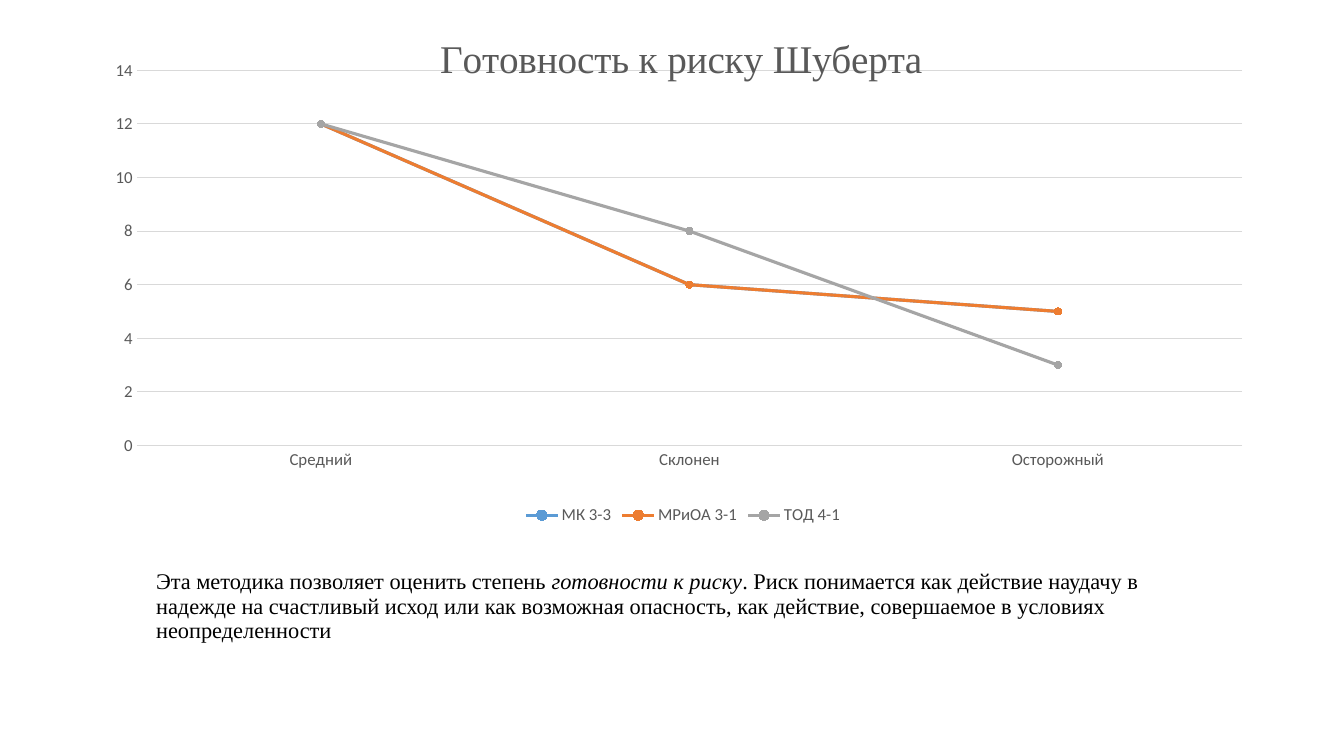
from dataclasses import dataclass

from lxml import etree
from pptx import Presentation
from pptx.chart.data import CategoryChartData
from pptx.dml.color import RGBColor
from pptx.enum.chart import XL_CHART_TYPE as ChartType
from pptx.enum.chart import XL_LEGEND_POSITION as LegendPos
from pptx.enum.chart import XL_MARKER_STYLE as Marker
from pptx.enum.chart import XL_TICK_MARK as Tick
from pptx.enum.text import MSO_ANCHOR as Anchor
from pptx.oxml.ns import qn
from pptx.util import Inches, Pt


@dataclass(frozen=True)
class Theme:
    serif: str = "Times New Roman"
    sans: str = "Calibri"
    ink: str = "000000"
    muted: str = "595959"
    grid: str = "D9D9D9"
    series: tuple = ("5B9BD5", "ED7D31", "A5A5A5")
    title_size: float = 28
    body_size: float = 16
    label_size: float = 12
    grid_width: float = 0.75
    line_width: float = 2.25
    marker_size: int = 5


def set_font(font, name, size, color):
    font.name = name
    font.size = Pt(size)
    font.color.rgb = RGBColor.from_string(color)


def add_run(p, text, *, name, size, color, bold=False, italic=False):
    r = p.add_run()
    r.text = text
    set_font(r.font, name, size, color)
    r.font.bold = bold
    r.font.italic = italic
    return r


def set_line(line, color, width):
    line.color.rgb = RGBColor.from_string(color)
    line.width = Pt(width)


def set_layout(parent, after, inner=False, **fractions):
    """Place a chart part by fractions of the chart's size."""
    for old in parent.findall(qn("c:layout")):
        parent.remove(old)
    layout = etree.Element(qn("c:layout"))
    manual = etree.SubElement(layout, qn("c:manualLayout"))
    values = {"layoutTarget": "inner"} if inner else {}
    values.update(xMode="edge", yMode="edge", **fractions)
    for tag, value in values.items():
        etree.SubElement(manual, qn(f"c:{tag}")).set("val", str(value))
    if after is None:
        parent.insert(0, layout)
    else:
        after.addnext(layout)


class SlideBuilder:
    def __init__(self, slide, theme):
        self.s = slide
        self.theme = theme

    def text(self, box, parts):
        t = self.theme
        sp = self.s.shapes.add_textbox(*map(Inches, box))
        tf = sp.text_frame
        tf.word_wrap = True
        tf.vertical_anchor = Anchor.MIDDLE
        p = tf.paragraphs[0]
        p.line_spacing = 0.9
        for text, italic in parts:
            add_run(p, text, name=t.serif, size=t.body_size, color=t.ink, italic=italic)

    def line_chart(self, box, title, categories, series):
        data = CategoryChartData()
        data.categories = categories
        for name, values in series.items():
            data.add_series(name, values)
        frame = self.s.shapes.add_chart(ChartType.LINE_MARKERS, *map(Inches, box), data)
        chart = frame.chart
        set_font(chart.font, self.theme.sans, self.theme.label_size, self.theme.muted)
        self.chart_title(chart, title)
        self.axes(chart)
        self.series_style(chart.plots[0])
        # Legend and plot area
        chart.has_legend = True
        chart.legend.position = LegendPos.BOTTOM
        chart.legend.include_in_layout = False
        set_font(chart.legend.font, self.theme.sans, self.theme.label_size, self.theme.muted)
        plot_area = chart.element.find(".//" + qn("c:plotArea"))
        set_layout(plot_area, None, inner=True, x=0.03, y=0.095, w=0.951, h=0.74)

    def chart_title(self, chart, title):
        t = self.theme
        chart.has_title = True
        p = chart.chart_title.text_frame.paragraphs[0]
        add_run(p, title, name=t.serif, size=t.title_size, color=t.muted)
        node = chart.element.find(".//" + qn("c:title"))
        set_layout(node, node.find(qn("c:tx")), x=0.285, y=0.01)

    def axes(self, chart):
        t = self.theme
        cat, val = chart.category_axis, chart.value_axis
        for axis in (cat, val):
            axis.major_tick_mark = axis.minor_tick_mark = Tick.NONE
            set_font(axis.tick_labels.font, t.sans, t.label_size, t.muted)
        set_line(cat.format.line, t.grid, t.grid_width)
        val.format.line.fill.background()
        val.minimum_scale, val.maximum_scale, val.major_unit = 0, 14, 2
        val.has_major_gridlines = True
        set_line(val.major_gridlines.format.line, t.grid, t.grid_width)

    def series_style(self, plot):
        t = self.theme
        plot.vary_by_categories = False
        for ser, color in zip(plot.series, t.series):
            ser.smooth = False
            set_line(ser.format.line, color, t.line_width)
            marker = ser.marker
            marker.style = Marker.CIRCLE
            marker.size = t.marker_size
            marker.format.fill.solid()
            marker.format.fill.fore_color.rgb = RGBColor.from_string(color)
            set_line(marker.format.line, color, t.grid_width)


def main():
    prs = Presentation()
    prs.slide_width, prs.slide_height = Inches(13.33), Inches(7.5)
    builder = SlideBuilder(prs.slides.add_slide(prs.slide_layouts[6]), Theme())

    # Explanation below the chart
    builder.text((1.45, 4.94, 10.32, 2.16), [
        ("Эта методика позволяет оценить степень ", False),
        ("готовности к риску", True),
        (". Риск понимается как действие наудачу в надежде на счастливый исход "
         "или как возможная опасность, как действие, совершаемое в условиях "
         "неопределенности", False),
    ])

    # Risk readiness by group
    builder.line_chart(
        (1.01, 0.22, 11.53, 5.03),
        "Готовность к риску Шуберта",
        ["Средний", "Склонен", "Осторожный"],
        {"МК 3-3": (12, 6, 5), "МРиОА 3-1": (12, 6, 5), "ТОД 4-1": (12, 8, 3)},
    )
    prs.save("out.pptx")


if __name__ == "__main__":
    main()
